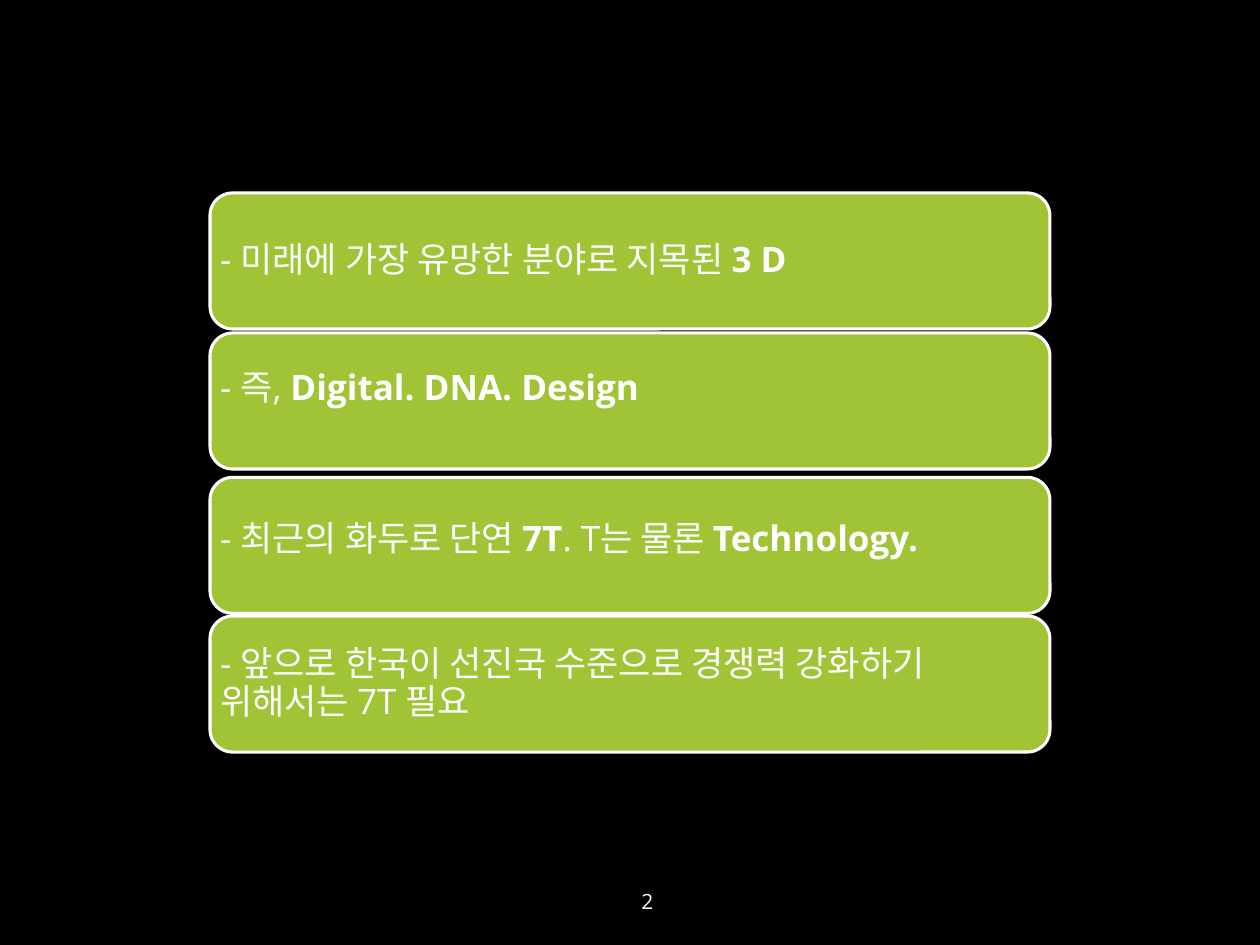
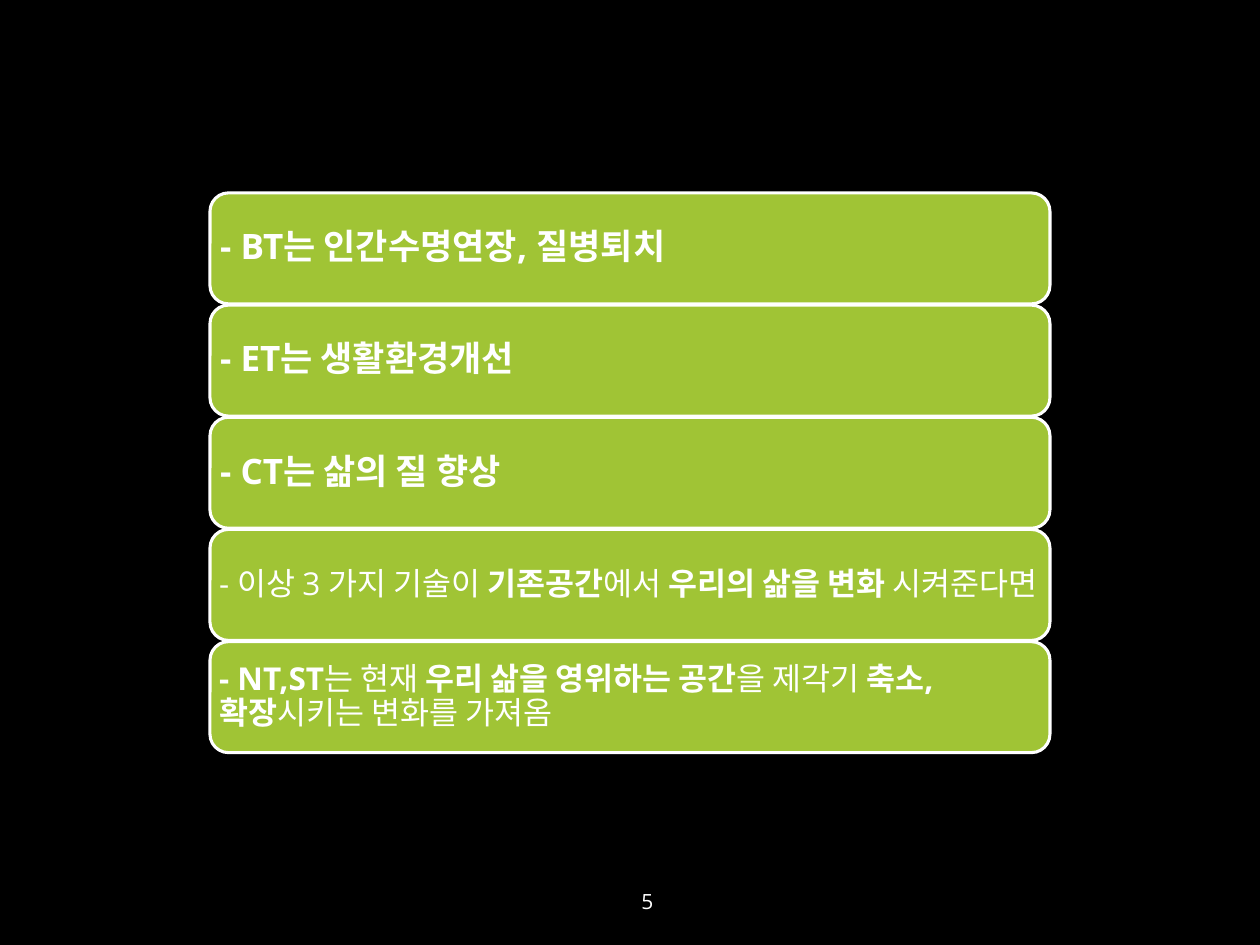
from pptx import Presentation
from pptx.dml.color import RGBColor
from pptx.enum.shapes import MSO_SHAPE
from pptx.enum.text import MSO_ANCHOR, PP_ALIGN
from pptx.util import Pt

BLACK, WHITE, GREEN = "000000", "FFFFFF", "A0C435"
FONT = "Open Sans"
LEFT, TOP, WIDTH = 120, 110.25, 480
ROUND = 0.1667
BEVEL = 0.29

FUTURE = [
    (110.25, "- 미래에 가장 유망한 분야로 지목된 **3 D", {"space": 0.9}),
    (190.25, "- 즉, **Digital. DNA. Design", {"lift": 17}),
    (272.75, "- 최근의 화두로 단연 **7T**. T는 물론 **Technology.", {"lift": 8.5}),
    (352, "- 앞으로 한국이 선진국 수준으로 경쟁력 강화하기 위해서는 7T 필요", {"space": 0.9}),
]
CHANGE = [
    ("**- BT는 인간수명연장, 질병퇴치", 20),
    ("**- ET는 생활환경개선", 20),
    ("**- CT는 삶의 질 향상", 20),
    ("- 이상 3 가지 기술이 **기존공간**에서 **우리의 삶을 변화** 시켜준다면", 18),
    ("**- NT,ST**는 현재 **우리 삶을 영위하는 공간**을 제각기 **축소, 확장**시키는 변화를 가져옴", 18),
]


def color(code):
    return RGBColor.from_string(code)


def write(shape, text, size=20, align=PP_ALIGN.LEFT, space=1.0, pads=(7.2, 3.6, 7.2, 3.6)):
    frame = shape.text_frame
    frame.word_wrap = True
    frame.vertical_anchor = MSO_ANCHOR.MIDDLE
    frame.margin_left, frame.margin_top, frame.margin_right, frame.margin_bottom = map(Pt, pads)
    para = frame.paragraphs[0]
    para.alignment = align
    para.line_spacing = space
    for index, part in enumerate(text.split("**")):
        if part:
            run = para.add_run()
            run.text = part
            run.font.name = FONT
            run.font.size = Pt(size)
            run.font.bold = index % 2 == 1
            run.font.color.rgb = color(WHITE)


def add_card(slide, box, text, size=20, space=1.0, lift=0):
    card = slide.shapes.add_shape(MSO_SHAPE.ROUNDED_RECTANGLE, *map(Pt, box))
    card.adjustments[0] = ROUND
    card.shadow.inherit = False
    card.fill.solid()
    card.fill.fore_color.rgb = color(GREEN)
    card.line.color.rgb = color(WHITE)
    card.line.width = Pt(1.75)
    pad = size * 0.29 - box[3] * ROUND * BEVEL
    write(card, text, size=size, space=space, pads=(pad, pad, pad, pad + lift))


def add_page(deck, number):
    slide = deck.slides.add_slide(deck.slide_layouts[6])
    slide.background.fill.solid()
    slide.background.fill.fore_color.rgb = color(BLACK)
    label = slide.shapes.add_textbox(Pt(326), Pt(500.5), Pt(88), Pt(28.75))
    write(label, str(number), size=12, align=PP_ALIGN.CENTER)
    return slide


def add_future(slide, left, width):
    for top, text, style in FUTURE:
        add_card(slide, (left, top, width, 77.75), text, **style)


def add_change(slide, left, top, width, step=64.1):
    for row, (text, size) in enumerate(CHANGE):
        add_card(slide, (left, top + row * step, width, 63.4), text, size=size, space=0.9)


def main():
    deck = Presentation()
    deck.slide_width, deck.slide_height = Pt(720), Pt(540)
    add_future(add_page(deck, 2), LEFT, WIDTH)
    add_change(add_page(deck, 5), LEFT, TOP, WIDTH)
    deck.save("out.pptx")


if __name__ == "__main__":
    main()
